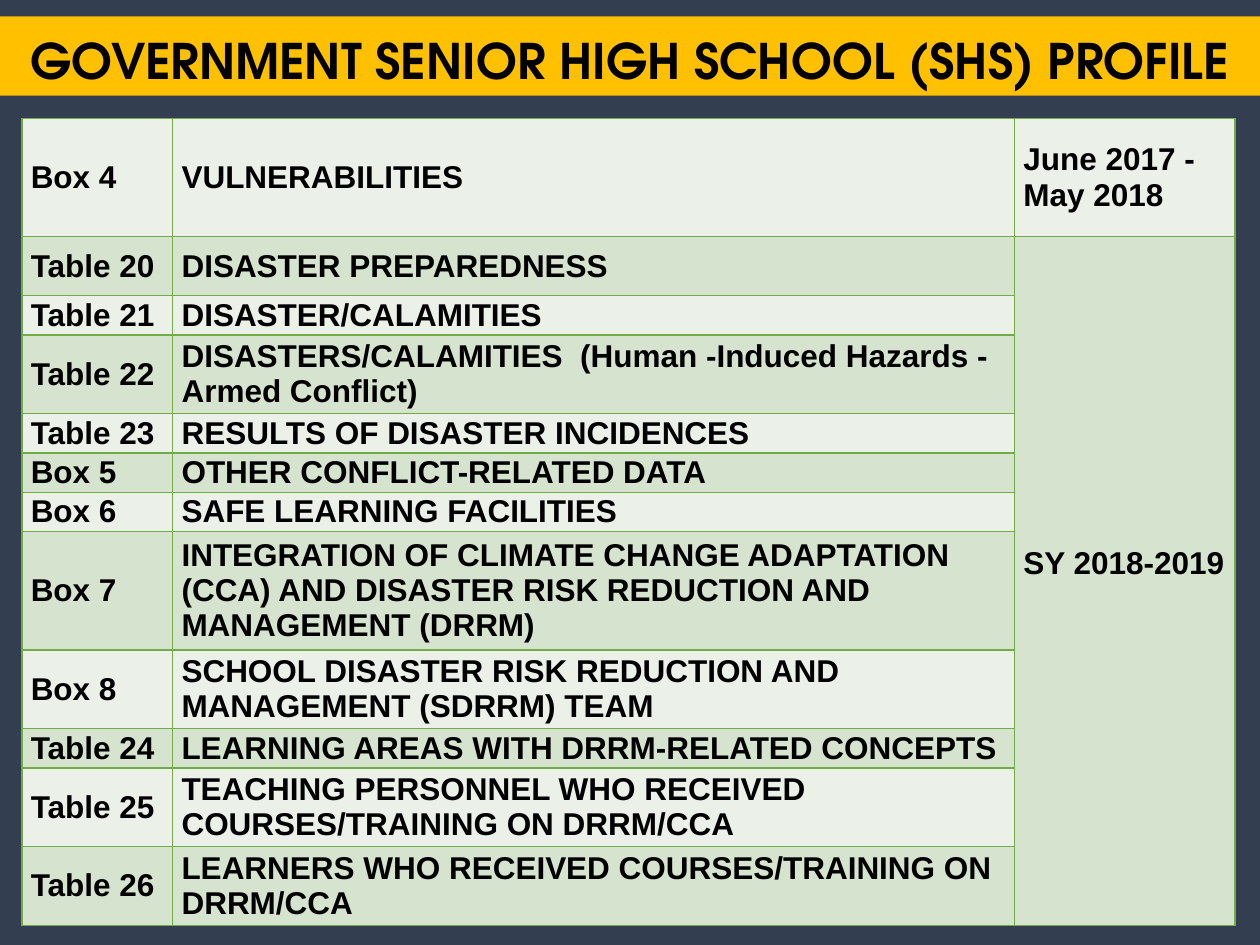
from dataclasses import dataclass
from lxml import etree
from pptx import Presentation
from pptx.dml.color import RGBColor
from pptx.enum.text import MSO_ANCHOR, PP_ALIGN
from pptx.oxml.ns import qn
from pptx.util import Cm, Pt

MIDDLE = MSO_ANCHOR.MIDDLE
BOTTOM = MSO_ANCHOR.BOTTOM
CENTER = PP_ALIGN.CENTER
LEFT = PP_ALIGN.LEFT


@dataclass
class Theme:
    background: str = "333F50"
    banner: str = "FFC000"
    text: str = "000000"
    border: str = "70AD47"
    bands: tuple = ("EBF1E9", "D5E3CF")
    title_font: str = "TeX Gyre Adventor"
    body_font: str = "Arial"
    title_size: int = 28
    body_size: int = 18
    border_width: int = 1


theme = Theme()


def add_text(frame, text, font, size, align):
    para = frame.paragraphs[0]
    para.alignment = align
    span = para.add_run()
    span.text = text
    span.font.name = font
    span.font.size = Pt(size)
    span.font.bold = True
    span.font.color.rgb = RGBColor.from_string(theme.text)


def add_borders(cell):
    properties = cell._tc.get_or_add_tcPr()
    for side in ("lnL", "lnR", "lnT", "lnB"):
        line = etree.SubElement(properties, qn(f"a:{side}"), w=str(Pt(theme.border_width)))
        fill = etree.SubElement(line, qn("a:solidFill"))
        etree.SubElement(fill, qn("a:srgbClr"), val=theme.border)


deck = Presentation()
deck.slide_width = Cm(25.4)
deck.slide_height = Cm(19.05)
page = deck.slides.add_slide(deck.slide_layouts[5])
page.background.fill.solid()
page.background.fill.fore_color.rgb = RGBColor.from_string(theme.background)

title = page.shapes.title
title.left, title.top = Cm(0), Cm(0.33)
title.width, title.height = deck.slide_width, Cm(1.6)
title.fill.solid()
title.fill.fore_color.rgb = RGBColor.from_string(theme.banner)
title.text_frame.vertical_anchor = BOTTOM
add_text(title.text_frame, "GOVERNMENT SENIOR HIGH SCHOOL (SHS) PROFILE",
         theme.title_font, theme.title_size, CENTER)

sections = [
    (3, "Box 4", "VULNERABILITIES"),
    (1.5, "Table 20", "DISASTER PREPAREDNESS"),
    (1, "Table 21", "DISASTER/CALAMITIES"),
    (2, "Table 22", "DISASTERS/CALAMITIES  (Human -Induced Hazards - Armed Conflict)"),
    (1, "Table 23", "RESULTS OF DISASTER INCIDENCES"),
    (1, "Box 5", "OTHER CONFLICT-RELATED DATA"),
    (1, "Box 6", "SAFE LEARNING FACILITIES"),
    (3, "Box 7", "INTEGRATION OF CLIMATE CHANGE ADAPTATION (CCA) AND DISASTER RISK "
                 "REDUCTION AND MANAGEMENT (DRRM)"),
    (2, "Box 8", "SCHOOL DISASTER RISK REDUCTION AND MANAGEMENT (SDRRM) TEAM"),
    (1, "Table 24", "LEARNING AREAS WITH DRRM-RELATED CONCEPTS"),
    (2, "Table 25", "TEACHING PERSONNEL WHO RECEIVED COURSES/TRAINING ON DRRM/CCA"),
    (2, "Table 26", "LEARNERS WHO RECEIVED COURSES/TRAINING ON DRRM/CCA"),
]
periods = {0: "June 2017 - May 2018", 1: "SY 2018-2019"}
column_widths = [Cm(3.04), Cm(16.97), Cm(4.45)]
table_height = Cm(16.27)
total_units = sum(units for units, label, topic in sections)

table = page.shapes.add_table(len(sections), len(column_widths), Cm(0.44), Cm(2.39),
                              sum(column_widths), table_height).table
for column, width in zip(table.columns, column_widths):
    column.width = width

for index, (units, label, topic) in enumerate(sections):
    table.rows[index].height = int(table_height * units / total_units)
    for position, text in enumerate((label, topic, periods.get(index))):
        cell = table.cell(index, position)
        cell.vertical_anchor = MIDDLE
        cell.margin_left = cell.margin_right = Cm(0.18)
        cell.margin_top = cell.margin_bottom = Cm(0)
        add_borders(cell)
        cell.fill.solid()
        cell.fill.fore_color.rgb = RGBColor.from_string(theme.bands[index % 2])
        if text:
            add_text(cell.text_frame, text, theme.body_font, theme.body_size, LEFT)

school_year = table.cell(1, 2)
school_year.merge(table.cell(len(sections) - 1, 2))
school_year.margin_bottom = Cm(0.72)

deck.save("out.pptx")
